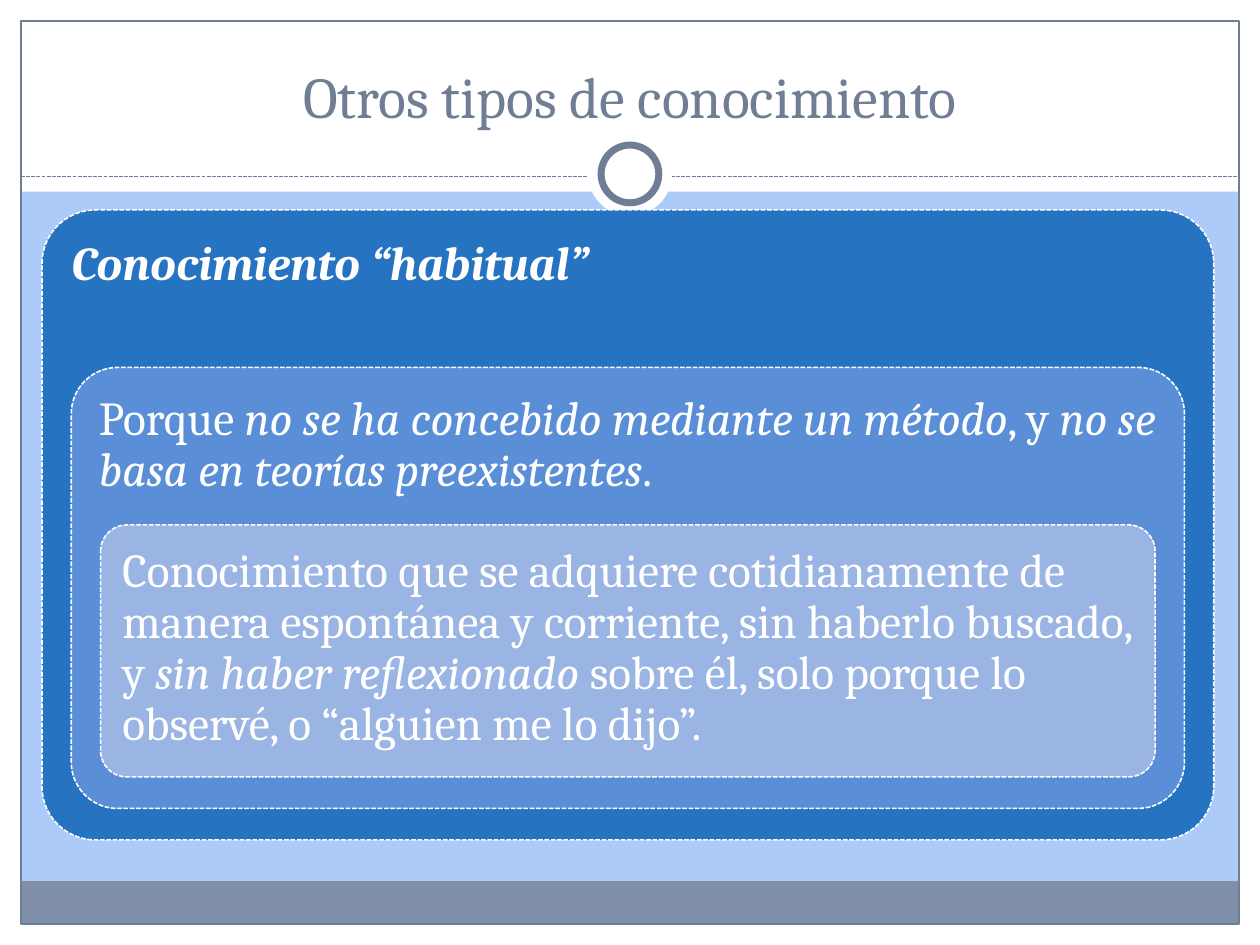
"""Builds a slide on everyday knowledge with three nested text panels."""
import pptx
import pptx.util
import pptx.dml.color
import pptx.enum.dml
import pptx.enum.shapes
import pptx.enum.text
import pptx.oxml.ns
import lxml.etree

Pt = pptx.util.Pt
SHAPE = pptx.enum.shapes.MSO_SHAPE
ANCHOR = pptx.enum.text.MSO_ANCHOR
ALIGN = pptx.enum.text.PP_ALIGN
DASH = pptx.enum.dml.MSO_LINE.SQUARE_DOT

WIDTH, HEIGHT = 720, 540
MARGIN = 12
FONT = "Cambria"
WHITE, SLATE, SKY, STEEL = "FFFFFF", "707E95", "ACCBF9", "7F8FA9"

HEADING = "Otros tipos de conocimiento"
PANELS = [
    ("2573C1", 0.085, [("Conocimiento “habitual”", True, True)]),
    ("5A8FD8", 0.105, [
        ("Porque ", False, False),
        ("no se ha concebido mediante un método", False, True),
        (", y ", False, False),
        ("no se basa en teorías preexistentes", False, True),
        (".", False, False),
    ]),
    ("9AB4E3", 0.105, [
        ("Conocimiento que se adquiere cotidianamente de manera espontánea "
         "y corriente, sin haberlo buscado, y ", False, False),
        ("sin haber reflexionado ", False, True),
        ("sobre él, solo porque lo observé, o “alguien me lo dijo”.", False, False),
    ]),
]
PANEL_LEFT, PANEL_TOP, PANEL_WIDTH, PANEL_HEIGHT = 24, 120, 669.6, 360
STEP_SIDE, STEP_TOP, STEP_BOTTOM = 16.75, 90, 18

FRAME = (MARGIN, MARGIN, WIDTH - 2 * MARGIN, HEIGHT - 2 * MARGIN)
BANDS = [
    ((0, HEIGHT - MARGIN, WIDTH, MARGIN), WHITE),
    ((0, 0, WIDTH, 109.5), WHITE),
    ((0, 0, MARGIN, HEIGHT), WHITE),
    ((WIDTH - MARGIN, 0, MARGIN, HEIGHT), WHITE),
    ((MARGIN, 503.5, WIDTH - 2 * MARGIN, 24.5), STEEL),
]
RULE_Y = 100.8
RING_Y = 99.4


def colour(hex_text):
    return pptx.dml.color.RGBColor.from_string(hex_text)


def style_line(line, hex_text, weight, dash=None):
    line.color.rgb = colour(hex_text)
    line.width = Pt(weight)
    if dash:
        line.dash_style = dash


def add_box(slide, kind, box, fill=None, line=None, weight=0.75, dash=None):
    shape = slide.shapes.add_shape(kind, *map(Pt, box))
    shape.shadow.inherit = False
    if fill:
        shape.fill.solid()
        shape.fill.fore_color.rgb = colour(fill)
    else:
        shape.fill.background()
    if line:
        style_line(shape.line, line, weight, dash)
    else:
        shape.line.fill.background()
    return shape


def add_circle(slide, size, **style):
    box = ((WIDTH - size) / 2, RING_Y - size / 2, size, size)
    add_box(slide, SHAPE.OVAL, box, WHITE, **style)


def format_run(run, size, hex_text, bold=False, italic=False):
    run.font.name = FONT
    run.font.size = Pt(size)
    run.font.color.rgb = colour(hex_text)
    run.font.bold, run.font.italic = bold, italic


def add_decoration(slide):
    for box, fill in BANDS:
        add_box(slide, SHAPE.RECTANGLE, box, fill)
    add_box(slide, SHAPE.RECTANGLE, FRAME, line=SLATE)
    rule = slide.shapes.add_connector(
        pptx.enum.shapes.MSO_CONNECTOR.STRAIGHT,
        Pt(MARGIN), Pt(RULE_Y), Pt(WIDTH - MARGIN), Pt(RULE_Y))
    style_line(rule.line, SLATE, 0.75, DASH)
    lxml.etree.SubElement(rule.element.spPr, pptx.oxml.ns.qn("a:effectLst"))
    add_circle(slide, 48)
    add_circle(slide, 33, line=SLATE, weight=4)


def place_heading(slide):
    title = slide.shapes.title
    title.element.getparent().append(title.element)
    title.left, title.top, title.width, title.height = map(Pt, (24, 18, 672, 60))
    title.text_frame.text = HEADING
    title.text_frame.vertical_anchor = ANCHOR.BOTTOM
    paragraph = title.text_frame.paragraphs[0]
    paragraph.alignment = ALIGN.CENTER
    format_run(paragraph.runs[0], 33, SLATE)


def add_panel(slide, level, fill, rounding, passages):
    box = (PANEL_LEFT + level * STEP_SIDE,
           PANEL_TOP + level * STEP_TOP,
           PANEL_WIDTH - 2 * level * STEP_SIDE,
           PANEL_HEIGHT - level * (STEP_TOP + STEP_BOTTOM))
    panel = add_box(slide, SHAPE.ROUNDED_RECTANGLE, box, fill, WHITE, 0.9, DASH)
    panel.adjustments[0] = rounding
    frame = panel.text_frame
    frame.word_wrap = True
    frame.vertical_anchor = ANCHOR.TOP
    frame.margin_left = frame.margin_top = frame.margin_bottom = Pt(8)
    frame.margin_right = Pt(6)
    paragraph = frame.paragraphs[0]
    paragraph.alignment = ALIGN.LEFT
    paragraph.line_spacing = 0.9
    for words, bold, italic in passages:
        run = paragraph.add_run()
        run.text = words
        format_run(run, 27, WHITE, bold, italic)


def main():
    deck = pptx.Presentation()
    deck.slide_width, deck.slide_height = Pt(WIDTH), Pt(HEIGHT)
    slide = deck.slides.add_slide(deck.slide_layouts[5])
    slide.background.fill.solid()
    slide.background.fill.fore_color.rgb = colour(SKY)
    add_decoration(slide)
    place_heading(slide)
    for level, panel in enumerate(PANELS):
        add_panel(slide, level, *panel)
    deck.save("out.pptx")


if __name__ == "__main__":
    main()
